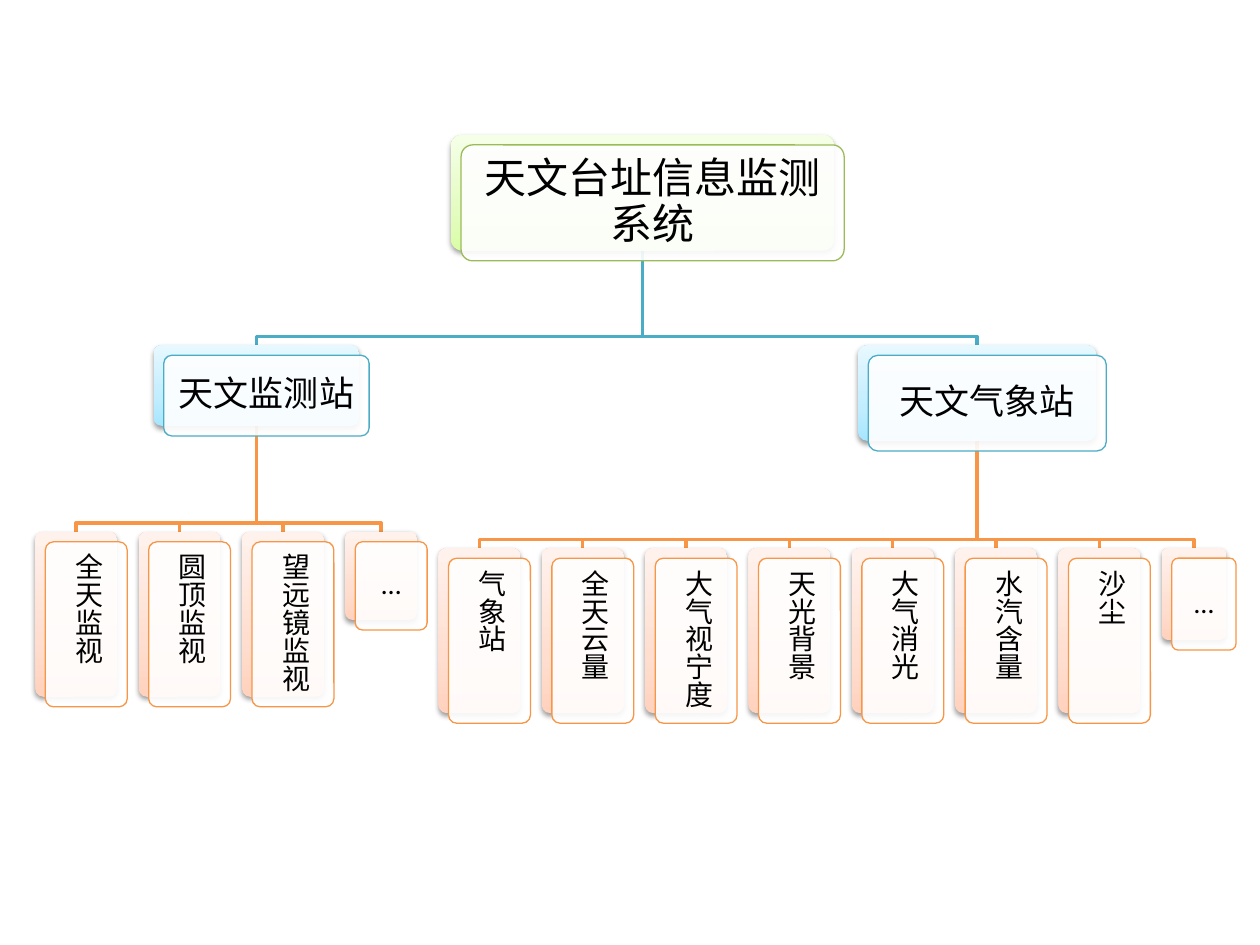
from dataclasses import dataclass, field

from lxml import etree
from pptx import Presentation
from pptx.dml.color import RGBColor
from pptx.enum.shapes import MSO_SHAPE
from pptx.enum.text import MSO_ANCHOR, PP_ALIGN
from pptx.oxml import parse_xml
from pptx.oxml.ns import nsdecls, qn
from pptx.util import Inches, Pt

ROUNDED = MSO_SHAPE.ROUNDED_RECTANGLE
MIDDLE = MSO_ANCHOR.MIDDLE
CENTER = PP_ALIGN.CENTER
JUSTIFY = PP_ALIGN.JUSTIFY

COLORS = {
    "text": "000000",
    "front": "FFFFFF",
    "shadow": "000000",
    "green": "9BBB59",
    "blue": "4BACC6",
    "orange": "F79646",
}
GRADIENTS = {
    "green": ("DAFDA7", "E4FCC2", "F5FFE7"),
    "blue": ("A7E6FF", "C1EDFF", "E7F8FF"),
    "orange": ("FFD2BD", "FFDED0", "FFF2ED"),
}
STOPS = (0, 35, 100)
FONT = "Calibri"
FRONT_OFFSET = 0.08
ELBOW_RISE = 0.07
LEAF_PITCH = 0.82
LEAF_SIZE = (0.65, 1.31)


@dataclass
class Node:
    label: str
    left: float
    top: float
    width: float
    height: float
    color: str
    size: int
    inset: float
    vertical: bool = False
    children: list = field(default_factory=list)

    @property
    def center(self):
        return self.left + self.width / 2


def make_leaves(labels, left, top, more_size):
    leaves = [
        Node(label, left + i * LEAF_PITCH, top, *LEAF_SIZE, "orange", 16, 0.07, True)
        for i, label in enumerate(labels)
    ]
    more_left = left + len(labels) * LEAF_PITCH
    return leaves + [Node("…", more_left, top, *more_size, "orange", 16, 0.07)]


def build_tree():
    monitoring = Node("天文监测站", 1.22, 2.74, 1.63, 0.64, "blue", 20, 0.08)
    monitoring.children = make_leaves(
        ["全天监视", "圆顶监视", "望远镜监视"], 0.28, 4.22, (0.57, 0.7))
    weather = Node("天文气象站", 6.81, 2.74, 1.89, 0.76, "blue", 20, 0.08)
    weather.children = make_leaves(
        ["气象站", "全天云量", "大气视宁度", "天光背景", "大气消光", "水汽含量", "沙尘"],
        3.48, 4.35, (0.51, 0.73))
    return Node("天文台址信息监测系统", 3.58, 1.07, 3.04, 0.92, "green", 24, 0.1,
                children=[monitoring, weather])


def add_branch(slide, parent, child):
    bottom = parent.top + parent.height
    elbow = child.top - ELBOW_RISE
    route = [(parent.center, bottom), (parent.center, elbow),
             (child.center, elbow), (child.center, child.top)]
    start, *bends = [(Inches(x), Inches(y)) for x, y in route]
    builder = slide.shapes.build_freeform(*start)
    builder.add_line_segments(bends, close=False)
    branch = builder.convert_to_shape()
    branch.shadow.inherit = False
    branch.fill.background()
    branch.line.color.rgb = RGBColor.from_string(COLORS[child.color])
    branch.line.width = Pt(2)


def add_panel(slide, node, offset=0):
    panel = slide.shapes.add_shape(
        ROUNDED, Inches(node.left + offset), Inches(node.top + offset),
        Inches(node.width), Inches(node.height))
    panel.adjustments[0] = 0.1
    panel.shadow.inherit = False
    return panel


def add_back(slide, node):
    back = add_panel(slide, node)
    back.line.fill.background()
    properties = back._element.spPr
    stops = "".join(
        f'<a:gs pos="{position * 1000}"><a:srgbClr val="{color}"/></a:gs>'
        for position, color in zip(STOPS, GRADIENTS[node.color]))
    gradient = parse_xml(
        f'<a:gradFill {nsdecls("a")} rotWithShape="1"><a:gsLst>{stops}</a:gsLst>'
        '<a:lin ang="16200000" scaled="0"/></a:gradFill>')
    properties.find(qn("a:prstGeom")).addnext(gradient)
    shadow = parse_xml(
        f'<a:outerShdw {nsdecls("a")} blurRad="{Pt(3.1)}" dist="{Pt(1.6)}" '
        f'dir="5400000" rotWithShape="0"><a:srgbClr val="{COLORS["shadow"]}">'
        '<a:alpha val="38000"/></a:srgbClr></a:outerShdw>')
    properties.find(qn("a:effectLst")).append(shadow)


def add_front(slide, node):
    front = add_panel(slide, node, FRONT_OFFSET)
    front.fill.solid()
    front.fill.fore_color.rgb = RGBColor.from_string(COLORS["front"])
    fill_color = front._element.spPr.find(qn("a:solidFill"))[0]
    etree.SubElement(fill_color, qn("a:alpha")).set("val", "90000")
    front.line.color.rgb = RGBColor.from_string(COLORS[node.color])
    front.line.width = Pt(0.75)


def add_label(slide, node):
    margin = 0.02
    label = slide.shapes.add_textbox(
        Inches(node.left + FRONT_OFFSET + margin),
        Inches(node.top + FRONT_OFFSET + margin),
        Inches(node.width - 2 * margin), Inches(node.height - 2 * margin))
    frame = label.text_frame
    frame.word_wrap = True
    frame.vertical_anchor = MIDDLE
    frame.margin_left = frame.margin_right = Inches(node.inset)
    frame.margin_top = frame.margin_bottom = Inches(node.inset)
    if node.vertical:
        frame._txBody.bodyPr.set("vert", "eaVert")
    frame.text = node.label
    paragraph = frame.paragraphs[0]
    paragraph.alignment = JUSTIFY if node.vertical else CENTER
    paragraph.line_spacing = 0.9
    font = paragraph.runs[0].font
    font.name = FONT
    font.size = Pt(node.size)
    font.color.rgb = RGBColor.from_string(COLORS["text"])


def add_branches(slide, node):
    for child in node.children:
        add_branches(slide, child)
        add_branch(slide, node, child)


def add_cards(slide, node):
    add_back(slide, node)
    add_front(slide, node)
    add_label(slide, node)
    for child in node.children:
        add_cards(slide, child)


def main():
    presentation = Presentation()
    presentation.slide_width = Inches(10)
    presentation.slide_height = Inches(7.5)
    slide = presentation.slides.add_slide(presentation.slide_layouts[6])
    system = build_tree()
    add_branches(slide, system)
    add_cards(slide, system)
    presentation.save("out.pptx")


if __name__ == "__main__":
    main()
